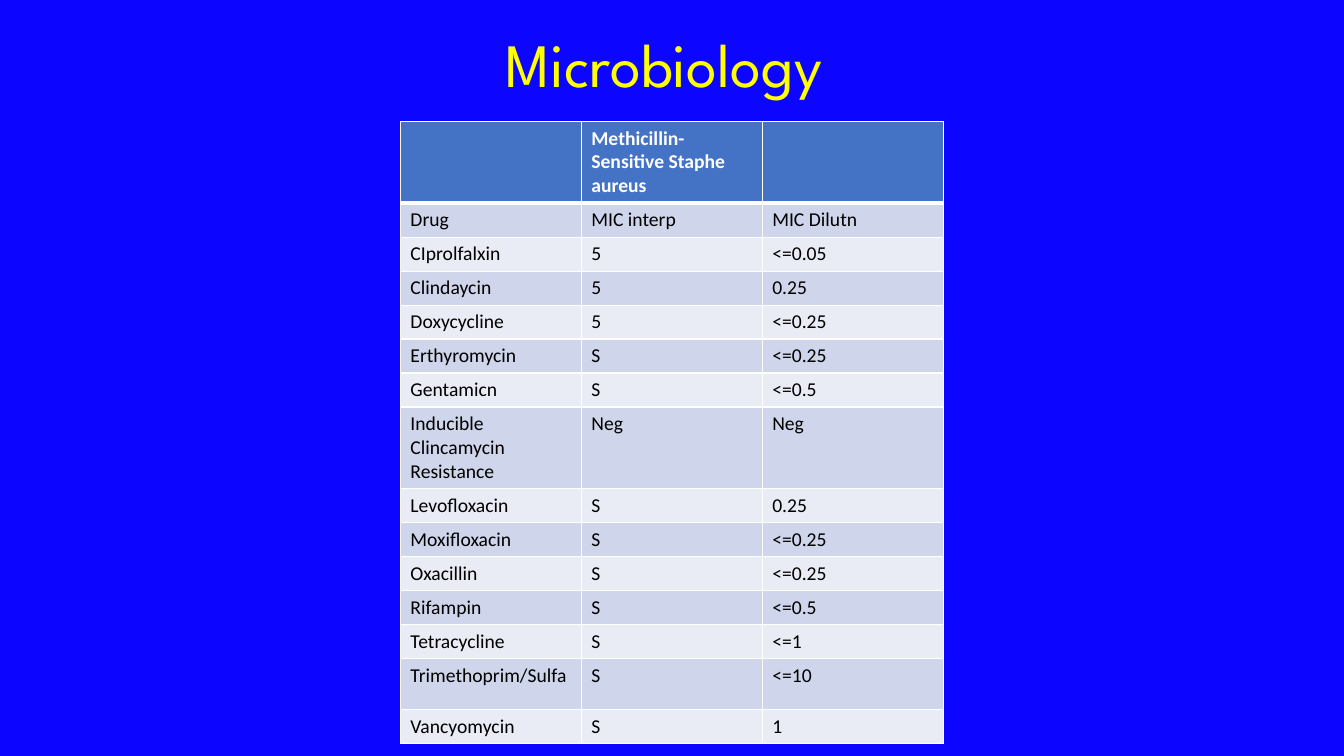
from dataclasses import dataclass

from lxml.etree import SubElement
from pptx import Presentation
from pptx.dml.color import RGBColor
from pptx.enum.text import MSO_ANCHOR, MSO_AUTO_SIZE, PP_ALIGN
from pptx.oxml.ns import qn
from pptx.slide import Slide
from pptx.table import _Cell as Cell
from pptx.util import Cm, Pt

COLOURS = {
    "background": "0C05FF",
    "title": "FFFF00",
    "header": "4472C4",
    "odd band": "CFD5EA",
    "even band": "E9EBF5",
    "light": "FFFFFF",
    "dark": "000000",
}
LINE_HEIGHT, TALL_HEIGHT = 0.85, 2.06
COLUMN_WIDTH = 4.56


@dataclass(frozen=True)
class ResultRow:
    drug: str
    interpretation: str
    dilution: str
    height: float = LINE_HEIGHT


RESULTS = [
    ResultRow("", "Methicillin-Sensitive Staphe aureus", "", TALL_HEIGHT),
    ResultRow("Drug", "MIC interp", "MIC Dilutn"),
    ResultRow("CIprolfalxin", "5", "<=0.05"),
    ResultRow("Clindaycin", "5", "0.25"),
    ResultRow("Doxycycline", "5", "<=0.25"),
    ResultRow("Erthyromycin", "S", "<=0.25"),
    ResultRow("Gentamicn", "S", "<=0.5"),
    ResultRow("Inducible Clincamycin Resistance", "Neg", "Neg", TALL_HEIGHT),
    ResultRow("Levofloxacin", "S", "0.25"),
    ResultRow("Moxifloxacin", "S", "<=0.25"),
    ResultRow("Oxacillin", "S", "<=0.25"),
    ResultRow("Rifampin", "S", "<=0.5"),
    ResultRow("Tetracycline", "S", "<=1"),
    ResultRow("Trimethoprim/Sulfa", "S", "<=10", 1.28),
    ResultRow("Vancyomycin", "S", "1"),
]


def colour(name: str) -> RGBColor:
    return RGBColor.from_string(COLOURS[name])


def add_title(slide: Slide) -> None:
    title = slide.shapes.title
    title.left, title.top = Cm(2.13), Cm(-0.15)
    title.width, title.height = Cm(29.21), Cm(3.68)
    frame = title.text_frame
    frame.text = "Microbiology"
    frame.auto_size = MSO_AUTO_SIZE.NONE
    frame.vertical_anchor = MSO_ANCHOR.MIDDLE
    para = frame.paragraphs[0]
    para.alignment = PP_ALIGN.CENTER
    para.line_spacing = 0.9
    font = para.runs[0].font
    font.name, font.size = "League Spartan", Pt(44)
    font.color.rgb = colour("title")


def add_borders(cell: Cell, top: int, bottom: int) -> None:
    """Draw white borders; call before filling, as the schema puts lines first."""
    properties = cell._tc.get_or_add_tcPr()
    for side, points in (("L", 1), ("R", 1), ("T", top), ("B", bottom)):
        line = SubElement(properties, qn(f"a:ln{side}"), w=str(Pt(points)))
        fill = SubElement(line, qn("a:solidFill"))
        SubElement(fill, qn("a:srgbClr"), val=COLOURS["light"])


def format_cell(cell: Cell, text: str, row_index: int) -> None:
    is_header = row_index == 0
    add_borders(cell, top=3 if row_index == 1 else 1, bottom=3 if is_header else 1)
    band = "odd band" if row_index % 2 else "even band"
    cell.fill.solid()
    cell.fill.fore_color.rgb = colour("header" if is_header else band)
    cell.text_frame.text = text
    for run in cell.text_frame.paragraphs[0].runs:
        run.font.name, run.font.size = "Calibri", Pt(14)
        run.font.bold = is_header
        run.font.color.rgb = colour("light" if is_header else "dark")


def add_results_table(slide: Slide) -> None:
    height = sum(result.height for result in RESULTS)
    table = slide.shapes.add_table(
        len(RESULTS), 3, Cm(10.09), Cm(3.06), Cm(3 * COLUMN_WIDTH), Cm(height)
    ).table
    for column in table.columns:
        column.width = Cm(COLUMN_WIDTH)
    for row_index, result in enumerate(RESULTS):
        row = table.rows[row_index]
        row.height = Cm(result.height)
        texts = (result.drug, result.interpretation, result.dilution)
        for cell, text in zip(row.cells, texts):
            format_cell(cell, text, row_index)


def main() -> None:
    deck = Presentation()
    deck.slide_width, deck.slide_height = Cm(33.87), Cm(19.05)
    slide = deck.slides.add_slide(deck.slide_layouts.get_by_name("Title Only"))
    slide.background.fill.solid()
    slide.background.fill.fore_color.rgb = colour("background")
    add_title(slide)
    add_results_table(slide)
    deck.save("out.pptx")


if __name__ == "__main__":
    main()
